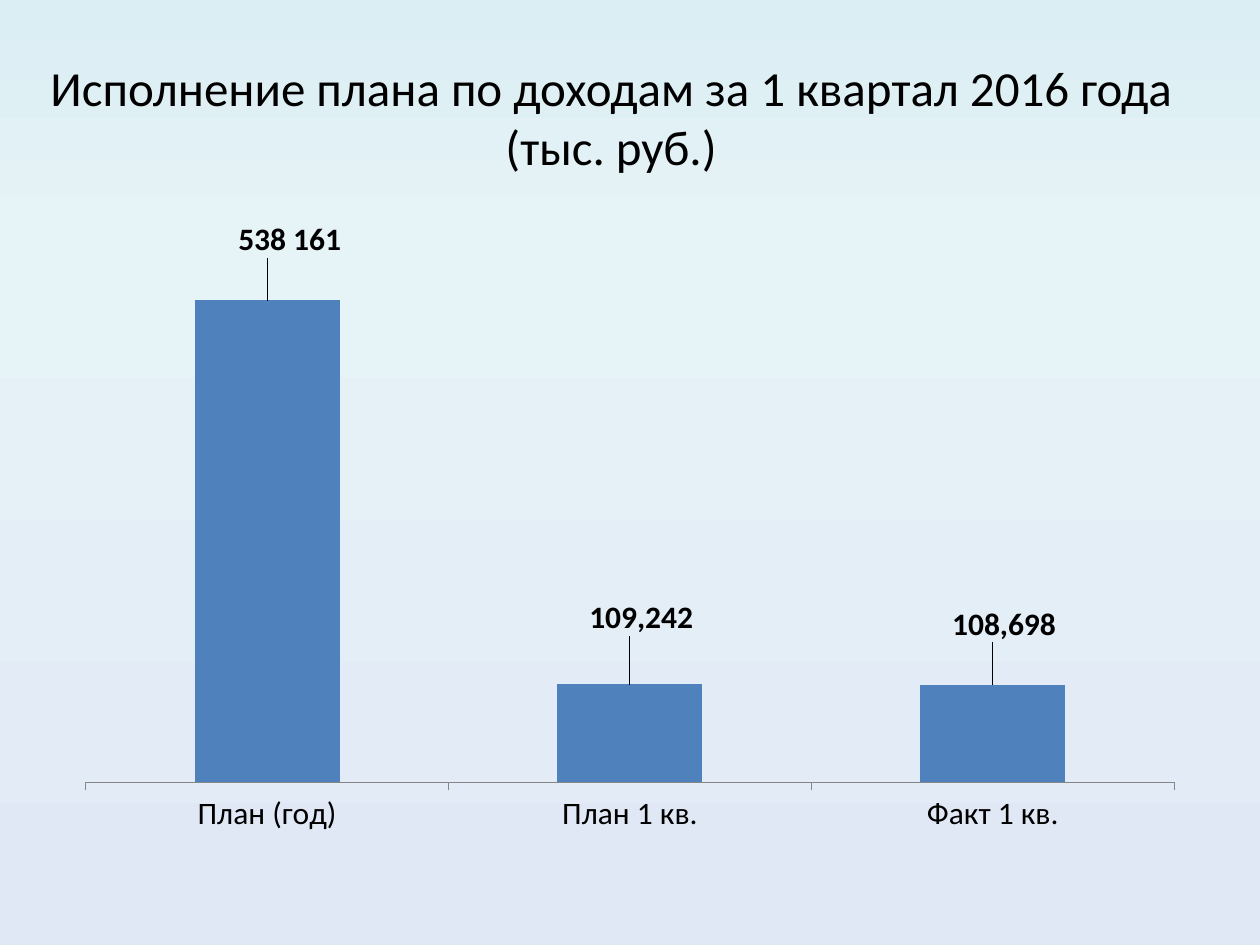
from copy import deepcopy
from dataclasses import dataclass

from lxml import etree
from pptx import Presentation
from pptx.chart.data import CategoryChartData
from pptx.dml.color import RGBColor
from pptx.enum.chart import XL_CHART_TYPE, XL_LABEL_POSITION, XL_TICK_MARK
from pptx.enum.text import MSO_ANCHOR, PP_ALIGN
from pptx.oxml.ns import qn
from pptx.util import Inches, Pt

COLUMNS = XL_CHART_TYPE.COLUMN_CLUSTERED
OUTSIDE_END = XL_LABEL_POSITION.OUTSIDE_END
TICK_OUTSIDE = XL_TICK_MARK.OUTSIDE
MIDDLE = MSO_ANCHOR.MIDDLE
CENTER = PP_ALIGN.CENTER


@dataclass(frozen=True)
class Theme:
    font: str = "Calibri"
    title_size: int = 28
    chart_size: int = 18
    text: str = "000000"
    bar: str = "4F81BD"
    axis: str = "868686"
    backdrop: tuple = ((0, "DBEEF4"), (0.25, "E6F3F7"), (1, "E1E8F5"))


THEME = Theme()
NUMBER_FORMAT = "#,##0"
INCOME = {"План (год)": 538161, "План 1 кв.": 109242, "Факт 1 кв.": 108698}
LABEL_SHIFTS = ((0.02, -0.06), (0.01, -0.07), (0.01, -0.06))


def style_font(font, size, bold=False):
    font.name = THEME.font
    font.size = Pt(size)
    font.bold = bold
    font.color.rgb = RGBColor.from_string(THEME.text)


def write_text(frame, text, size, bold=False, align=CENTER):
    paragraph = frame.paragraphs[0]
    paragraph.text = text
    paragraph.alignment = align
    for run in paragraph.runs:
        style_font(run.font, size, bold)
    for line_break in paragraph._p.findall(qn("a:br")):
        etree.SubElement(line_break, qn("a:rPr"), sz=str(size * 100))


def paint_background(slide):
    fill = slide.background.fill
    fill.gradient()
    fill.gradient_angle = 270
    stop_list = slide._element.find(".//" + qn("a:gsLst"))
    stop_list.append(deepcopy(stop_list[-1]))
    for stop, (position, color) in zip(fill.gradient_stops, THEME.backdrop):
        stop.position = position
        stop.color.rgb = RGBColor.from_string(color)


def add_title(slide, text):
    title = slide.shapes.title
    title.left, title.top = Inches(0.2), Inches(0.3)
    title.width, title.height = Inches(9.3), Inches(1.25)
    title.text_frame.vertical_anchor = MIDDLE
    write_text(title.text_frame, text, THEME.title_size)


def manual_layout(**settings):
    layout = etree.Element(qn("c:layout"))
    manual = etree.SubElement(layout, qn("c:manualLayout"))
    for name, value in settings.items():
        etree.SubElement(manual, qn(f"c:{name}"), val=str(value))
    return layout


def place_plot(chart):
    plot_area = chart._chartSpace.find(".//" + qn("c:plotArea"))
    for layout in plot_area.findall(qn("c:layout")):
        plot_area.remove(layout)
    plot_area.insert(0, manual_layout(
        layoutTarget="inner", xMode="edge", yMode="edge",
        x=0.02, y=0.03, w=0.96, h=0.87))


def label_columns(series):
    labels = series.data_labels
    labels.show_value = True
    labels.number_format = NUMBER_FORMAT
    labels.number_format_is_linked = False
    labels.position = OUTSIDE_END
    style_font(labels.font, THEME.chart_size, bold=True)

    for index in range(len(LABEL_SHIFTS)):
        label = series.points[index].data_label
        if index == 0:
            write_text(label.text_frame, "538 161", THEME.chart_size, bold=True)
        else:
            style_font(label.font, THEME.chart_size, bold=True)
        label.position = OUTSIDE_END

    point_labels = series._element.findall(".//" + qn("c:dLbl"))
    for point_label, (x, y) in zip(point_labels, LABEL_SHIFTS):
        point_label.insert(1, manual_layout(x=x, y=y))
        text_format = point_label.find(qn("c:txPr"))
        if text_format is not None:
            number_format = etree.Element(
                qn("c:numFmt"), formatCode=NUMBER_FORMAT, sourceLinked="0")
            text_format.addprevious(number_format)


def add_income_chart(slide):
    data = CategoryChartData(number_format=NUMBER_FORMAT)
    data.categories = list(INCOME)
    data.add_series("Series 1", list(INCOME.values()))
    chart = slide.shapes.add_chart(
        COLUMNS, Inches(0.5), Inches(1.75), Inches(9), Inches(4.95), data).chart
    chart.has_legend = False
    chart.has_title = False
    style_font(chart.font, THEME.chart_size)

    amounts = chart.value_axis
    amounts.visible = False
    amounts.has_major_gridlines = False
    amounts.minimum_scale, amounts.maximum_scale = 0, 600000
    periods = chart.category_axis
    periods.major_tick_mark = TICK_OUTSIDE
    periods.format.line.color.rgb = RGBColor.from_string(THEME.axis)
    periods.format.line.width = Pt(0.75)

    columns = chart.plots[0]
    columns.gap_width = 150
    columns.vary_by_categories = False
    income = columns.series[0]
    income.format.fill.solid()
    income.format.fill.fore_color.rgb = RGBColor.from_string(THEME.bar)
    label_columns(income)
    place_plot(chart)


def main():
    deck = Presentation()
    deck.slide_width, deck.slide_height = Inches(10), Inches(7.5)
    slide = deck.slides.add_slide(deck.slide_layouts.get_by_name("Title Only"))
    paint_background(slide)
    add_title(slide, "Исполнение плана по доходам за 1 квартал 2016 года\n(тыс. руб.)")
    add_income_chart(slide)
    deck.save("out.pptx")


if __name__ == "__main__":
    main()
